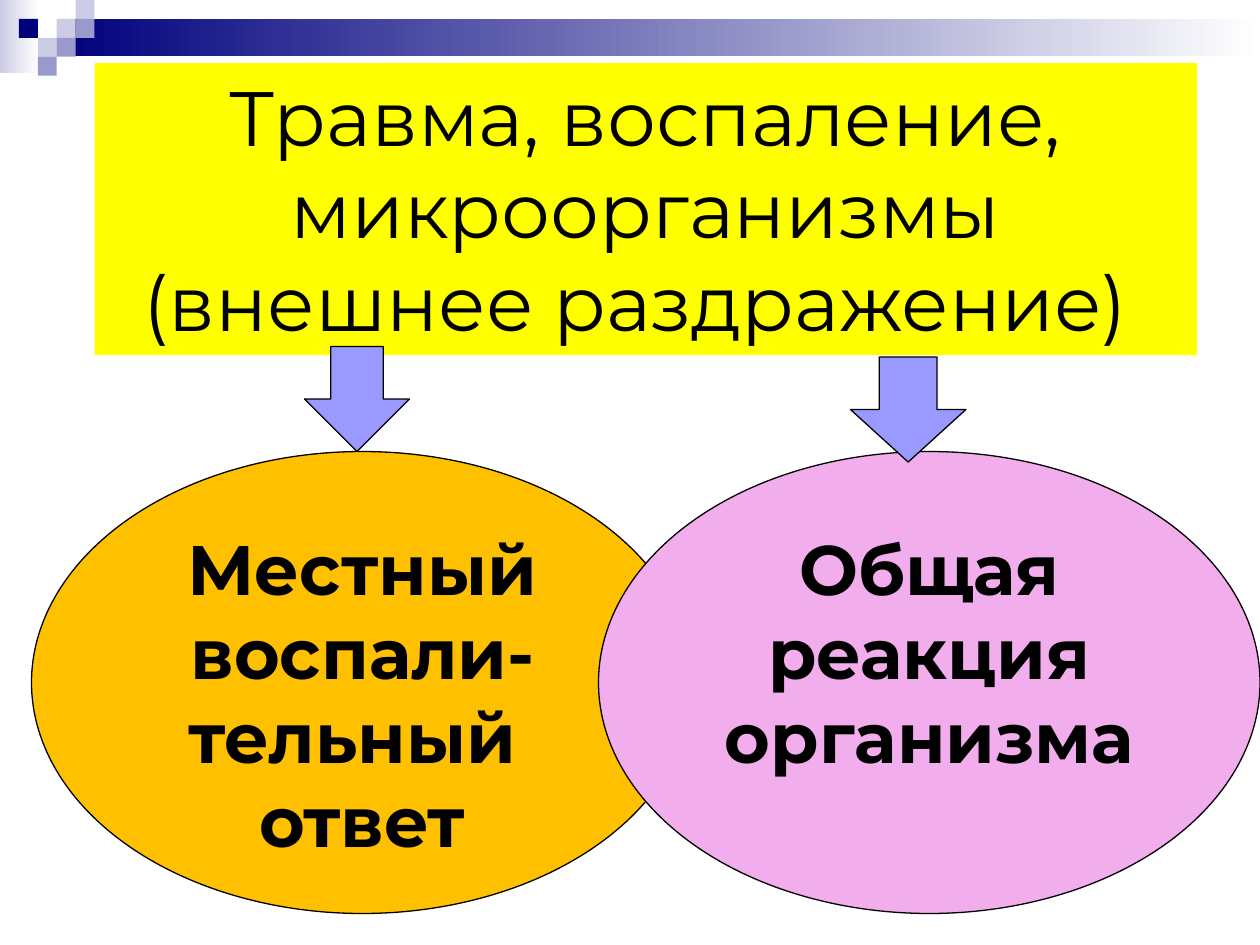
from pptx import Presentation
from pptx.dml.color import RGBColor
from pptx.enum.shapes import MSO_SHAPE
from pptx.enum.text import MSO_ANCHOR, MSO_AUTO_SIZE, PP_ALIGN
from pptx.util import Pt

RECT, OVAL, ARROW = MSO_SHAPE.RECTANGLE, MSO_SHAPE.OVAL, MSO_SHAPE.DOWN_ARROW
TOP, CENTER, NO_FIT = MSO_ANCHOR.TOP, PP_ALIGN.CENTER, MSO_AUTO_SIZE.NONE
TITLE_ONLY = 5

THEME = {
    "font": "Montserrat", "title_size": 44, "body_size": 40,
    "text": "000000", "line": "000000", "line_width": 0.75,
    "navy": "00007D", "mid": "9999CC", "pale": "CCCCE6", "white": "FFFFFF",
    "title": "FFFF00", "local": "FFC000", "general": "F1ADEC", "arrow": "9999FF",
}

# Content
TITLE = "Травма, воспаление, микроорганизмы (внешнее раздражение) "
TITLE_BOX = (54, 36, 630, 167)
RESPONSES = [  # left edge, fill, paragraphs
    (18, "local", ["Местный воспали-тельный ", "ответ"]),
    (342, "general", ["Общая", "реакция организма"]),
]
OVAL_TOP, OVAL_W, OVAL_H = 258, 378, 264
ARROWS = [(486, 204, 66, 60), (174, 198, 60, 60)]

# Corner ornament: gradient bands, then squares as (column, row, fill)
BANDS = [((0, 0, 22, 42), "pale"), ((32.4, 10.8, 687.6, 21.4), "navy")]
CELL = 10.8
SQUARES = [(3, 1, "pale"), (4, 0, "pale"), (4, 1, "mid"), (2, 2, "pale"),
           (1, 1, "navy"), (3, 2, "mid"), (2, 3, "mid")]


def color(name):
    return RGBColor.from_string(THEME[name])


def add_shape(s, kind, box, fill, outlined=False):
    sp = s.shapes.add_shape(kind, *map(Pt, box))
    sp.shadow.inherit = False
    sp.fill.solid()
    sp.fill.fore_color.rgb = color(fill)
    if outlined:
        sp.line.color.rgb = color("line")
        sp.line.width = Pt(THEME["line_width"])
    else:
        sp.line.fill.background()
    return sp


def write(sp, paragraphs, size, bold):
    tf = sp.text_frame
    frame = {"word_wrap": True, "auto_size": NO_FIT, "vertical_anchor": TOP,
             "margin_left": Pt(7.2), "margin_right": Pt(7.2),
             "margin_top": Pt(3.6), "margin_bottom": Pt(3.6)}
    for name, value in frame.items():
        setattr(tf, name, value)
    font = {"name": THEME["font"], "size": Pt(THEME[size]), "bold": bold}
    for i, text in enumerate(paragraphs):
        p = tf.add_paragraph() if i else tf.paragraphs[0]
        p.alignment = CENTER
        r = p.add_run()
        r.text = text
        for name, value in font.items():
            setattr(r.font, name, value)
        r.font.color.rgb = color("text")


def main():
    prs = Presentation()
    prs.slide_width, prs.slide_height = Pt(720), Pt(540)
    s = prs.slides.add_slide(prs.slide_layouts[TITLE_ONLY])

    # Corner ornament
    for box, start in BANDS:
        fill = add_shape(s, RECT, box, start).fill
        fill.gradient()
        fill.gradient_angle = 0
        for stop, name, position in zip(fill.gradient_stops, (start, "white"), (0, 1)):
            stop.color.rgb = color(name)
            stop.position = position
    for col, row, fill in SQUARES:
        add_shape(s, RECT, (col * CELL, row * CELL, CELL, CELL), fill)

    # Title
    title = s.shapes.title
    for name, value in zip(("left", "top", "width", "height"), TITLE_BOX):
        setattr(title, name, Pt(value))
    title.fill.solid()
    title.fill.fore_color.rgb = color("title")
    write(title, [TITLE], "title_size", False)

    # Responses
    for left, fill, paragraphs in RESPONSES:
        sp = add_shape(s, OVAL, (left, OVAL_TOP, OVAL_W, OVAL_H), fill, True)
        write(sp, paragraphs, "body_size", True)

    # Arrows from the title to the responses
    for box in ARROWS:
        add_shape(s, ARROW, box, "arrow", True)

    prs.save("out.pptx")


if __name__ == "__main__":
    main()
